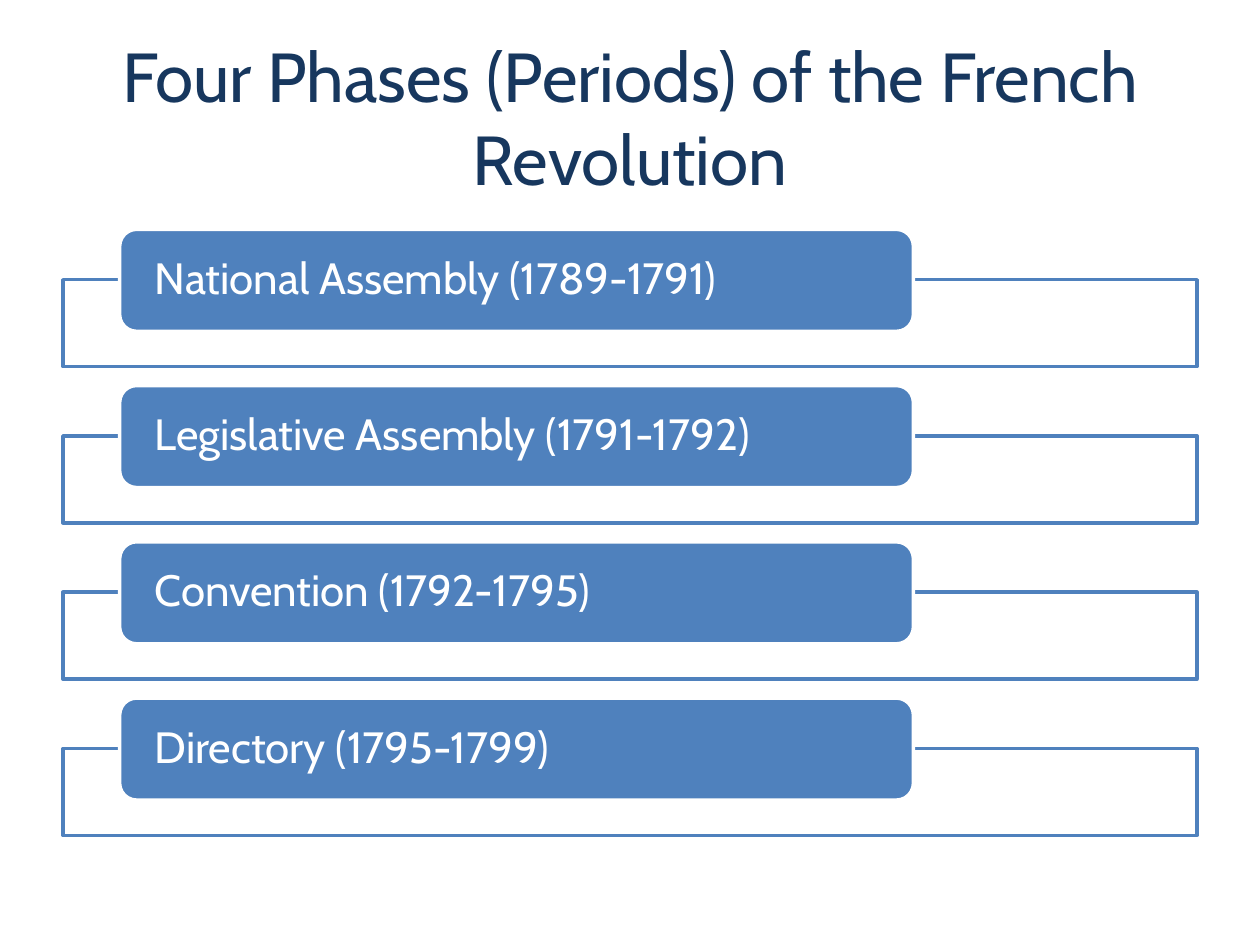
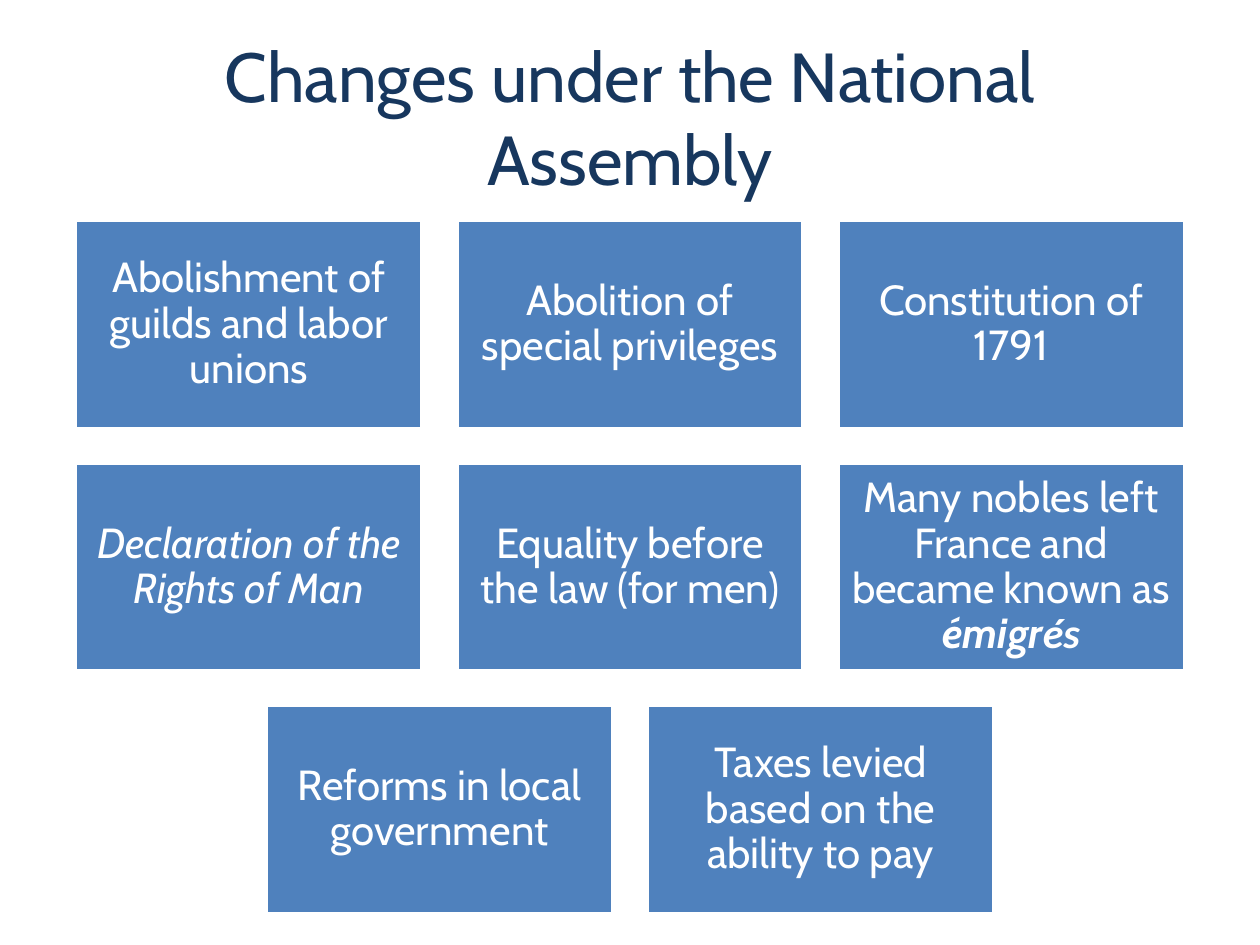
from pptx import Presentation
from pptx.dml.color import RGBColor
from pptx.enum import shapes, text
from pptx.oxml import parse_xml
from pptx.oxml.ns import nsdecls
from pptx.util import Inches, Pt

# Content
PHASES_TITLE = "Four Phases (Periods) of the French Revolution"
PHASES = [
    "National Assembly (1789-1791)",
    "Legislative Assembly (1791-1792)",
    "Convention (1792-1795)",
    "Directory (1795-1799)",
]

CHANGES_TITLE = "Changes under the National Assembly"
ITALIC = {"italic": True}
TERM = {"bold": True, "italic": True}
CHANGES = [  # each change is a list of (words, font format)
    [("Abolishment of guilds and labor unions", {})],
    [("Abolition of special privileges", {})],
    [("Constitution of 1791", {})],
    [("Declaration of the Rights of Man", ITALIC)],
    [("Equality before the law (for men)", {})],
    [("Many nobles left France and became known as ", {}),
     ("émigr", TERM), ("és", {**TERM, "name": "Calibri"})],
    [("Reforms in local government", {})],
    [("Taxes levied based on the ability to pay", {})],
]

# Shared style
SLIDE_W, SLIDE_H = 10, 7.5
FONT = "Cabin"
NAVY, BLUE, WHITE = "17375E", "4F81BD", "FFFFFF"
LEFT, CENTER = text.PP_ALIGN.LEFT, text.PP_ALIGN.CENTER
RECT = shapes.MSO_SHAPE.RECTANGLE
ROUNDED = shapes.MSO_SHAPE.ROUNDED_RECTANGLE


def color(value):
    return RGBColor.from_string(value)


def write(shape, runs, size, ink, align, margins=(0.1, 0.05), spacing=1.0):
    frame = shape.text_frame
    side, end = (Inches(m) for m in margins)
    layout = {
        "word_wrap": True, "vertical_anchor": text.MSO_ANCHOR.MIDDLE,
        "margin_left": side, "margin_right": side,
        "margin_top": end, "margin_bottom": end,
    }
    for key, value in layout.items():
        setattr(frame, key, value)
    paragraph = frame.paragraphs[0]
    paragraph.alignment = align
    paragraph.line_spacing = spacing
    for words, extra in runs:
        run = paragraph.add_run()
        run.text = words
        for key, value in {"name": FONT, "size": Pt(size), **extra}.items():
            setattr(run.font, key, value)
        run.font.color.rgb = color(ink)


def add_box(slide, preset, place, fill, line):
    box = slide.shapes.add_shape(preset, *map(Inches, place))
    box.shadow.inherit = False
    box.fill.solid()
    box.fill.fore_color.rgb = color(fill)
    box.line.color.rgb = color(line)
    box.line.width = Pt(2)
    return box


def add_titled_slide(deck, title):
    slide = deck.slides.add_slide(deck.slide_layouts[6])
    heading = slide.shapes.add_textbox(*map(Inches, (0.5, 0.3, 9, 1.25)))
    write(heading, [(title, {})], 39.6, NAVY, CENTER)
    return slide


def build_phases(deck):
    slide = add_titled_slide(deck, PHASES_TITLE)
    first_top, pitch, label_h = 1.82, 1.24, 0.81
    for row, phase in enumerate(PHASES):
        top = first_top + row * pitch
        # Frame starts near the middle of its label
        frame = add_box(slide, RECT, (0.5, top + 0.4, 9, 0.69), WHITE, BLUE)
        frame.fill._xPr.find(".//{*}srgbClr").append(
            parse_xml(f'<a:alpha {nsdecls("a")} val="90000"/>'))
        label = add_box(slide, ROUNDED, (0.95, top, 6.3, label_h), BLUE, WHITE)
        write(label, [(phase, {})], 25, WHITE, LEFT, (0.24, 0), 0.9)


def build_changes(deck):
    slide = add_titled_slide(deck, CHANGES_TITLE)
    columns, first_top = 3, 1.75
    card_w, card_h = 2.75, 1.65
    gap = card_w / 10
    for start in range(0, len(CHANGES), columns):
        row = CHANGES[start:start + columns]
        top = first_top + start // columns * (card_h + gap)
        # Every row is centred, the short last one too
        left = (SLIDE_W - len(row) * (card_w + gap) + gap) / 2
        for column, change in enumerate(row):
            place = (left + column * (card_w + gap), top, card_w, card_h)
            card = add_box(slide, RECT, place, BLUE, WHITE)
            write(card, change, 24, WHITE, CENTER, (0.1, 0.1), 0.9)


def main():
    deck = Presentation()
    deck.slide_width, deck.slide_height = Inches(SLIDE_W), Inches(SLIDE_H)
    build_phases(deck)
    build_changes(deck)
    deck.save("out.pptx")


if __name__ == "__main__":
    main()
